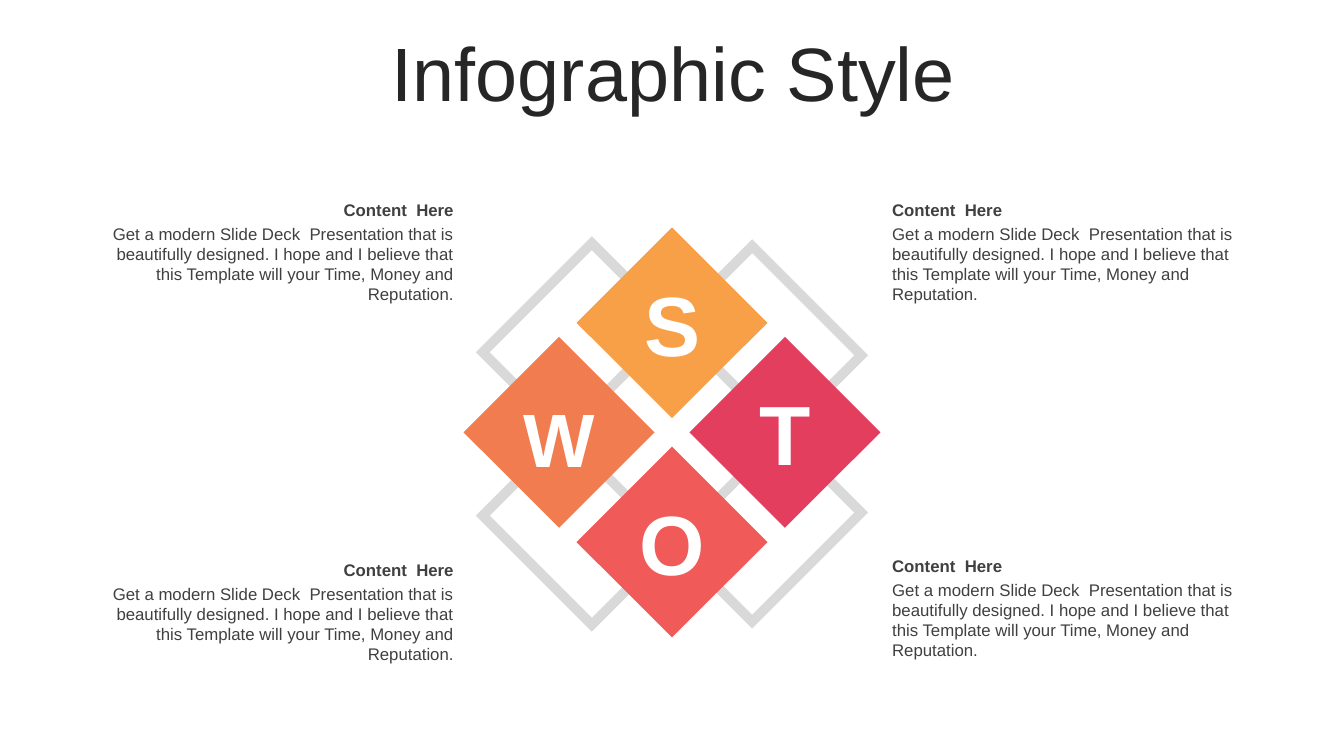
import pptx
import pptx.util
import pptx.dml.color
import pptx.enum.shapes
import pptx.enum.text
import pptx.oxml.ns
import lxml.etree

ALIGN = pptx.enum.text.PP_ALIGN
ANCHOR = pptx.enum.text.MSO_ANCHOR
WIDE, HIGH = pptx.util.Inches(13.33), pptx.util.Inches(7.5)

# All lengths are percent of the slide's width (x) or height (y).
TITLE = "Infographic Style"
HEAD = "Content  Here"
BODY = ("Get a modern Slide Deck  Presentation that is beautifully designed. "
        "I hope and I believe that this Template will your Time, Money and "
        "Reputation.")
MID_X, MID_Y = 50, 57.2
STEP_X, STEP_Y = 8.4, 14.5
SIDE = 10.05
FRAMES = [(45, 57.6), (315, 57.2)]  # turn, middle
# letter, column, row, fill, size, letter drop
TILES = [
    ("S", 0, -1, "F8A047", 60, 0),
    ("O", 0, 1, "F05A59", 60, 0),
    ("W", -1, 0, "F07C4F", 54, 0.7),
    ("T", 1, 0, "E43E5F", 60, 0),
]
LEFT = (6.3, 28.2, ALIGN.RIGHT)
RIGHT = (65.64, 27.3, ALIGN.LEFT)
NOTES = [(RIGHT, 25.73), (RIGHT, 72.8), (LEFT, 25.73), (LEFT, 73.33)]


def color(code):
    return pptx.dml.color.RGBColor.from_string(code)


def place(x, y, wide, high):
    return [round(WIDE * x / 100), round(HIGH * y / 100),
            round(WIDE * wide / 100), round(HIGH * high / 100)]


def add_rect(slide, mid_y, wide, high, turn, mid_x=MID_X):
    """Add a turned rectangle by its middle."""
    box = place(mid_x - wide / 2, mid_y - high / 2, wide, high)
    rect = slide.shapes.add_shape(
        pptx.enum.shapes.MSO_SHAPE.RECTANGLE, *box)
    rect.rotation = turn
    rect.shadow.inherit = False
    return rect


def add_text(slide, box, text, size, ink, align, anchor=ANCHOR.MIDDLE,
             bold=False):
    frame = slide.shapes.add_textbox(*place(*box)).text_frame
    frame.word_wrap = True
    frame.vertical_anchor = anchor
    frame.text = text
    para = frame.paragraphs[0]
    para.alignment = align
    font = para.runs[0].font
    font.name, font.bold = "Arial", bold
    font.size = pptx.util.Pt(size)
    font.color.rgb = color(ink)
    return para


def add_frame(slide, turn, mid_y):
    rect = add_rect(slide, mid_y, 11.48, 50.4, turn)
    rect.fill.background()
    rect.line.color.rgb = color("D9D9D9")
    rect.line.width = pptx.util.Pt(7)
    line = rect.line._get_or_add_ln()
    lxml.etree.SubElement(line, pptx.oxml.ns.qn("a:miter"), lim="800000")


def add_tile(slide, col, row, fill):
    rect = add_rect(slide, MID_Y + row * STEP_Y, SIDE, SIDE * WIDE / HIGH,
                    45, MID_X + col * STEP_X)
    rect.fill.solid()
    rect.fill.fore_color.rgb = color(fill)
    rect.line.fill.background()


def add_letter(slide, letter, col, row, size, drop):
    high = size / 4.05
    box = (MID_X + col * STEP_X - SIDE / 2,
           MID_Y + row * STEP_Y + drop - high / 2, SIDE, high)
    add_text(slide, box, letter, size, "FFFFFF", ALIGN.CENTER, bold=True)


def add_note(slide, side, top):
    left, wide, align = side
    add_text(slide, (left, top, wide, 4), HEAD, 12, "404040", align,
             bold=True)
    add_text(slide, (left, top + 3.2, wide, 12.13), BODY, 12, "404040",
             align, ANCHOR.TOP)


def main():
    deck = pptx.Presentation()
    deck.slide_width, deck.slide_height = WIDE, HIGH
    slide = deck.slides.add_slide(deck.slide_layouts[6])
    title = add_text(slide, (2.63, 4.93, 94.97, 10.53), TITLE, 54, "262626",
                     ALIGN.CENTER)
    title.line_spacing = 0.9
    for turn, mid_y in FRAMES:
        add_frame(slide, turn, mid_y)
    for letter, col, row, fill, size, drop in TILES:
        add_tile(slide, col, row, fill)
        add_letter(slide, letter, col, row, size, drop)
    for side, top in NOTES:
        add_note(slide, side, top)
    deck.save("out.pptx")


if __name__ == "__main__":
    main()
